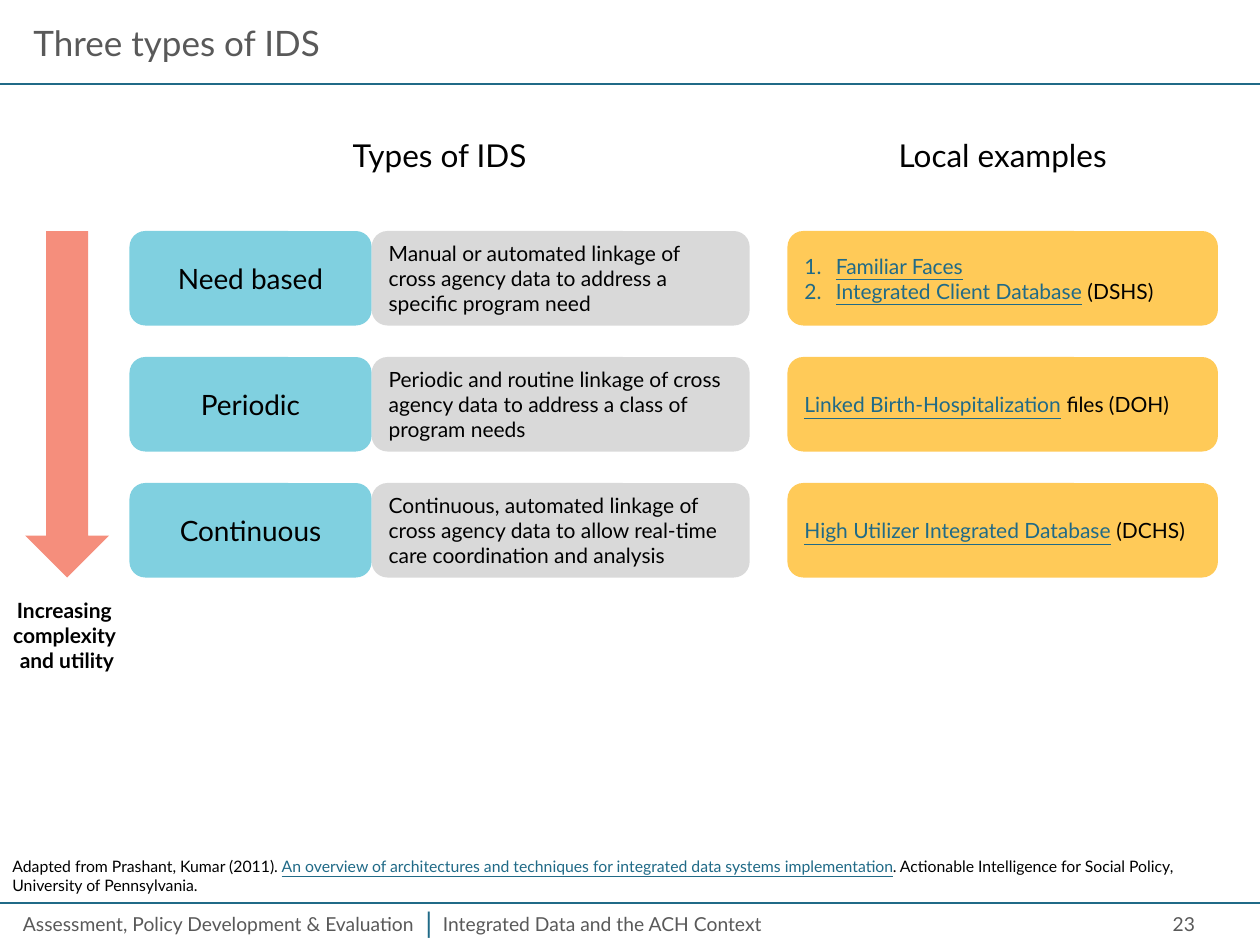
from lxml import etree
from pptx import Presentation
from pptx.dml.color import RGBColor
from pptx.enum.shapes import MSO_CONNECTOR, MSO_SHAPE
from pptx.enum.text import MSO_ANCHOR, MSO_AUTO_SIZE, PP_ALIGN
from pptx.oxml.ns import qn
from pptx.util import Pt

LEFT, CENTER, RIGHT = PP_ALIGN.LEFT, PP_ALIGN.CENTER, PP_ALIGN.RIGHT
TOP, MIDDLE = MSO_ANCHOR.TOP, MSO_ANCHOR.MIDDLE
GROW = MSO_AUTO_SIZE.SHAPE_TO_FIT_TEXT
ROUNDED, DOWN_ARROW = MSO_SHAPE.ROUNDED_RECTANGLE, MSO_SHAPE.DOWN_ARROW
STRAIGHT = MSO_CONNECTOR.STRAIGHT

FONT = "Lato"
TEAL, GREY, BLACK = "206A87", "595959", "000000"
BLUE, SILVER, YELLOW, CORAL = "80D0E0", "D9D9D9", "FFCA58", "F58E7C"

# A paragraph is a list of (text, is_link) runs.
IDS_TYPES = [
    ("Need based",
     "Manual or automated linkage of cross agency data to address a specific program need",
     [[("Familiar Faces", True)],
      [("Integrated Client Database", True), (" (DSHS)", False)]]),
    ("Periodic",
     "Periodic and routine linkage of cross agency data to address a class of program needs",
     [[("Linked Birth-Hospitalization", True), (" files (DOH)", False)]]),
    ("Continuous",
     "Continuous, automated linkage of cross agency data to allow real-time care coordination and analysis",
     [[("High Utilizer Integrated Database", True), (" (DCHS)", False)]]),
]
CITATION = [[
    ("Adapted from Prashant, Kumar (2011). ", False),
    ("An overview of architectures and techniques for integrated data systems implementation", True),
    (". Actionable Intelligence for Social Policy, University of Pennsylvania.", False),
]]
COMPLEXITY = ["Increasing ", "complexity ", "and utility"]

SLIDE_W, SLIDE_H = 720, 540
TYPE_X, TYPE_W = 74, 138.4
DESCRIPTION_X, DESCRIPTION_W = TYPE_X + TYPE_W, 216
EXAMPLE_X, EXAMPLE_W = 450, 246
ROW_Y, ROW_H, ROW_STEP = 132, 54, 72
HEADING_Y, HEADING_H = 78, 21.6
FOOTER_Y, FOOTER_H = 517.5, 21
RULES_Y = [48, 516]

HEADINGS = [
    ("Types of IDS", TYPE_X, TYPE_W + DESCRIPTION_W),
    ("Local examples", EXAMPLE_X, EXAMPLE_W),
]
FOOTERS = [
    ("Assessment, Policy Development & Evaluation", (6, FOOTER_Y, 258, FOOTER_H), {}),
    ("Integrated Data and the ACH Context", (246, FOOTER_Y, 366, FOOTER_H), {}),
    ("|", (233, 514, 24, 26.6), {"size": 16, "color": TEAL, "align": CENTER}),
    ("23", (522, FOOTER_Y, 168, FOOTER_H), {"align": RIGHT, "anchor": MIDDLE}),
]


def rgb(hex_color):
    return RGBColor.from_string(hex_color)


def write(shape, paragraphs, size=12, color=BLACK, align=LEFT, anchor=TOP,
          bold=False, inset=None, grow=False):
    frame = shape.text_frame
    settings = {"word_wrap": True, "vertical_anchor": anchor}
    if grow:
        settings["auto_size"] = GROW
    if inset is not None:
        for side in ("left", "top", "right", "bottom"):
            settings[f"margin_{side}"] = Pt(inset)
    for name, value in settings.items():
        setattr(frame, name, value)
    if isinstance(paragraphs, str):
        paragraphs = [paragraphs]
    for index, content in enumerate(paragraphs):
        paragraph = frame.add_paragraph() if index else frame.paragraphs[0]
        paragraph.alignment = align
        runs = [(content, False)] if isinstance(content, str) else content
        for text, is_link in runs:
            run = paragraph.add_run()
            run.text = text
            style = {"name": FONT, "size": Pt(size), "bold": bold, "underline": is_link}
            for name, value in style.items():
                setattr(run.font, name, value)
            run.font.color.rgb = rgb(TEAL if is_link else color)


def add_text(slide, box, paragraphs, **style):
    label = slide.shapes.add_textbox(*map(Pt, box))
    write(label, paragraphs, **style)


def add_filled(slide, preset, box, fill):
    shape = slide.shapes.add_shape(preset, *map(Pt, box))
    shape.shadow.inherit = False
    shape.fill.solid()
    shape.fill.fore_color.rgb = rgb(fill)
    shape.line.fill.background()
    return shape


def add_rule(slide, y):
    rule = slide.shapes.add_connector(STRAIGHT, 0, Pt(y), Pt(SLIDE_W), Pt(y))
    rule.line.color.rgb = rgb(TEAL)
    rule.line.width = Pt(1.5)
    etree.SubElement(rule.element.spPr, qn("a:effectLst"))


def number_paragraphs(shape, indent):
    for paragraph in shape.text_frame.paragraphs:
        properties = paragraph._p.get_or_add_pPr()
        properties.set("marL", str(Pt(indent)))
        properties.set("indent", str(-Pt(indent)))
        etree.SubElement(properties, qn("a:buFont"), typeface="+mj-lt")
        etree.SubElement(properties, qn("a:buAutoNum"), type="arabicPeriod")


def main():
    deck = Presentation()
    deck.slide_width, deck.slide_height = Pt(SLIDE_W), Pt(SLIDE_H)
    slide = deck.slides.add_slide(deck.slide_layouts[6])

    for y in RULES_Y:
        add_rule(slide, y)
    for text, box, style in FOOTERS:
        add_text(slide, box, text, **{"size": 11, "color": GREY, **style})
    add_text(slide, (12, 12, 696, 24), "Three types of IDS",
             size=20, color=GREY, anchor=MIDDLE)

    for text, x, width in HEADINGS:
        add_text(slide, (x, HEADING_Y, width, HEADING_H), text,
                 size=18, align=CENTER, inset=0, grow=True)

    for row, (kind, description, examples) in enumerate(IDS_TYPES):
        y = ROW_Y + row * ROW_STEP
        cells = [
            (TYPE_X, TYPE_W, BLUE, kind, {"size": 16, "align": CENTER}),
            (DESCRIPTION_X, DESCRIPTION_W, SILVER, description, {}),
            (EXAMPLE_X, EXAMPLE_W, YELLOW, examples, {}),
        ]
        for x, width, fill, content, style in cells:
            cell = add_filled(slide, ROUNDED, (x, y, width, ROW_H), fill)
            write(cell, content, anchor=MIDDLE, **style)
        if len(examples) > 1:
            number_paragraphs(cell, 18)

    arrow_height = (len(IDS_TYPES) - 1) * ROW_STEP + ROW_H
    add_filled(slide, DOWN_ARROW, (14.4, ROW_Y, 48, arrow_height), CORAL)
    add_text(slide, (6, 341.5, 64.5, 43.6), COMPLEXITY,
             bold=True, align=CENTER, inset=0, grow=True)
    add_text(slide, (0, 486, 710, 29), CITATION, size=9, grow=True)

    deck.save("out.pptx")


if __name__ == "__main__":
    main()
